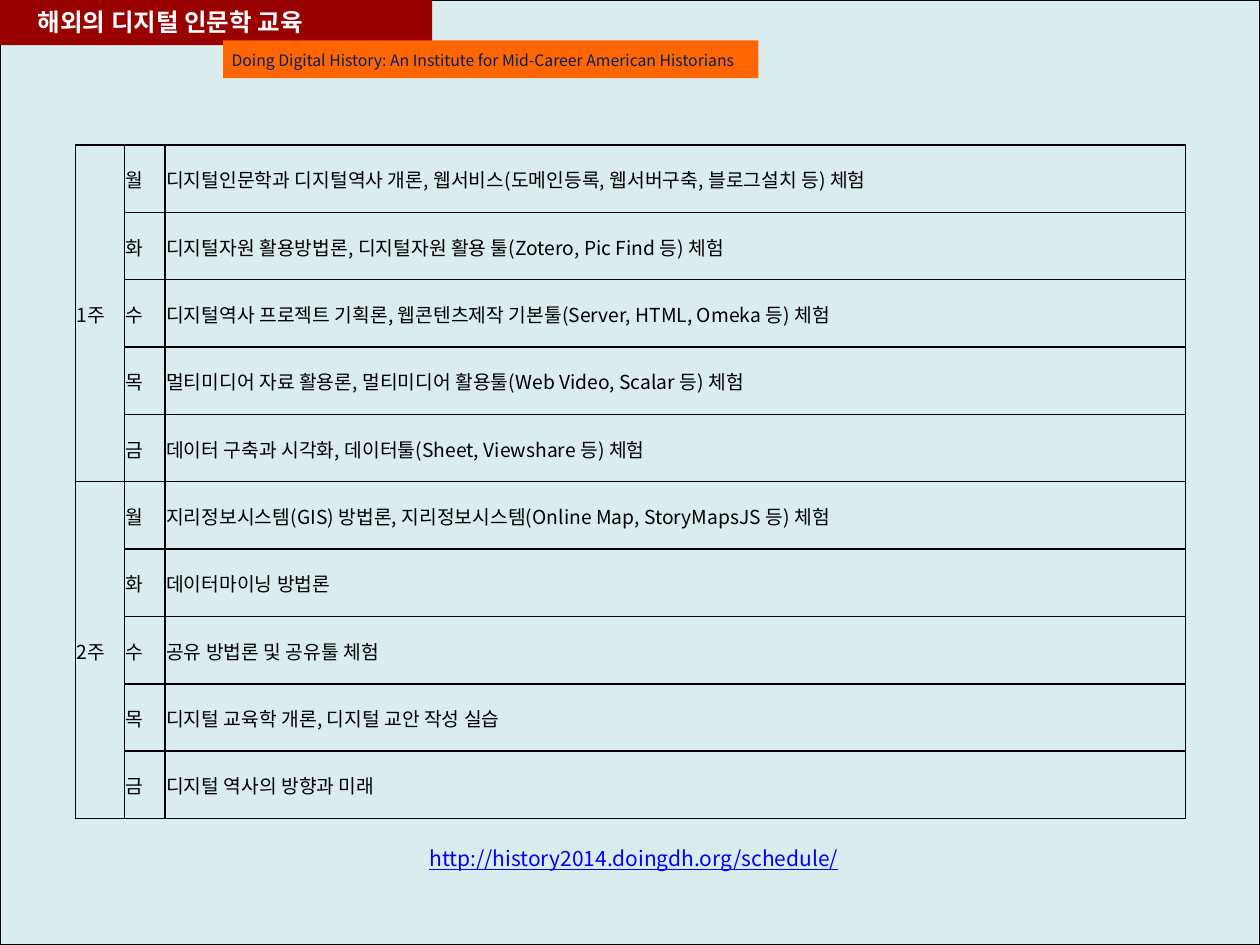
from lxml.etree import SubElement as Sub
from pptx import Presentation
from pptx.dml.color import RGBColor
from pptx.enum.shapes import MSO_SHAPE as Kind
from pptx.enum.text import MSO_ANCHOR as Anchor, PP_ALIGN as Align
from pptx.oxml.ns import qn
from pptx.util import Inches, Pt

FONT = "Noto Sans CJK KR"
BLACK = RGBColor(0, 0, 0)
WHITE = RGBColor(255, 255, 255)
PALE = RGBColor(0xD9, 0xED, 0xEF)
RED = RGBColor(0x99, 0, 0)
ORANGE = RGBColor(0xFF, 0x66, 0)
NAVY = RGBColor(0, 0x20, 0x60)
BLUE = RGBColor(0, 0, 255)

HEAD = {"size": Pt(14), "bold": True}
NOTE = {"size": Pt(9)}
LINK = {"size": Pt(12), "underline": True}
CELL = {"size": Pt(11), "bold": False}

DAYS = "월화수목금"
WEEKS = {
    "1주": [
        "디지털인문학과 디지털역사 개론, 웹서비스(도메인등록, 웹서버구축, 블로그설치 등) 체험",
        "디지털자원 활용방법론, 디지털자원 활용 툴(Zotero, Pic Find 등) 체험",
        "디지털역사 프로젝트 기획론, 웹콘텐츠제작 기본툴(Server, HTML, Omeka 등) 체험",
        "멀티미디어 자료 활용론, 멀티미디어 활용툴(Web Video, Scalar 등) 체험",
        "데이터 구축과 시각화, 데이터툴(Sheet, Viewshare 등) 체험",
    ],
    "2주": [
        "지리정보시스템(GIS) 방법론, 지리정보시스템(Online Map, StoryMapsJS 등) 체험",
        "데이터마이닝 방법론",
        "공유 방법론 및 공유툴 체험",
        "디지털 교육학 개론, 디지털 교안 작성 실습",
        "디지털 역사의 방향과 미래",
    ],
}


def write(frame, text, color, style):
    para = frame.paragraphs[0]
    para.alignment = Align.LEFT
    run = para.add_run()
    run.text = text
    font = run.font
    font.name = FONT
    for key, value in style.items():
        setattr(font, key, value)
    font.color.rgb = color
    Sub(font._element, qn("a:ea"), typeface=FONT)


def add_bar(slide, box, fill, edge=None):
    bar = slide.shapes.add_shape(Kind.RECTANGLE, *map(Inches, box))
    bar.shadow.inherit = False
    bar.fill.solid()
    bar.fill.fore_color.rgb = fill
    if edge is None:
        bar.line.fill.background()
    else:
        bar.line.color.rgb = edge
        bar.line.width = Pt(0.75)


def set_title(slide, box, text):
    title = slide.shapes.title
    title.left, title.top, title.width, title.height = map(Inches, box)
    title.element.getparent().append(title.element)
    title.text_frame.vertical_anchor = Anchor.MIDDLE
    write(title.text_frame, text, WHITE, HEAD)


def add_text(slide, box, text, color, style, wrap=True):
    frame = slide.shapes.add_textbox(*map(Inches, box)).text_frame
    frame.word_wrap = wrap
    frame.vertical_anchor = Anchor.MIDDLE
    write(frame, text, color, style)


def add_edges(cell):
    props = cell._tc.get_or_add_tcPr()
    for side in ("lnL", "lnR", "lnT", "lnB"):
        line = Sub(props, qn(f"a:{side}"), w=str(Pt(1)))
        fill = Sub(line, qn("a:solidFill"))
        Sub(fill, qn("a:srgbClr"), val=str(BLACK))


def style_cell(cell):
    form = {
        "margin_left": Inches(0.01),
        "margin_right": Inches(0.01),
        "margin_top": Inches(0.01),
        "margin_bottom": 0,
        "vertical_anchor": Anchor.MIDDLE,
    }
    for key, value in form.items():
        setattr(cell, key, value)
    add_edges(cell)
    cell.fill.background()


def add_plan(slide, box):
    count = len(DAYS)
    table = slide.shapes.add_table(
        count * len(WEEKS), 3, *map(Inches, box)
    ).table
    table.first_row = table.horz_banding = False
    for col, width in zip(table.columns, (0.39, 0.32, 8.1)):
        col.width = Inches(width)
    for cell in table.iter_cells():
        style_cell(cell)
    for week, (name, topics) in enumerate(WEEKS.items()):
        top = week * count
        first = table.cell(top, 0)
        first.merge(table.cell(top + count - 1, 0))
        write(first.text_frame, name, BLACK, CELL)
        for row, pair in enumerate(zip(DAYS, topics), top):
            for col, text in enumerate(pair, 1):
                write(table.cell(row, col).text_frame, text, BLACK, CELL)


def main():
    deck = Presentation()
    deck.slide_width, deck.slide_height = Inches(10), Inches(7.5)
    slide = deck.slides.add_slide(deck.slide_layouts[5])
    add_bar(slide, (0, 0, 10, 7.5), PALE, BLACK)
    add_bar(slide, (0, 0, 3.43, 0.36), RED)
    set_title(slide, (0.2, 0, 3.07, 0.34), "해외의 디지털 인문학 교육")
    add_text(slide, (3.31, 6.66, 3.47, 0.3),
             "http://history2014.doingdh.org/schedule/", BLUE, LINK, False)
    add_plan(slide, (0.6, 1.15, 8.81, 5.35))
    add_bar(slide, (1.77, 0.32, 4.25, 0.3), ORANGE)
    add_text(slide, (1.74, 0.35, 4.76, 0.25),
             "Doing Digital History: An Institute for Mid-Career American Historians",
             NAVY, NOTE)
    deck.save("out.pptx")


if __name__ == "__main__":
    main()
